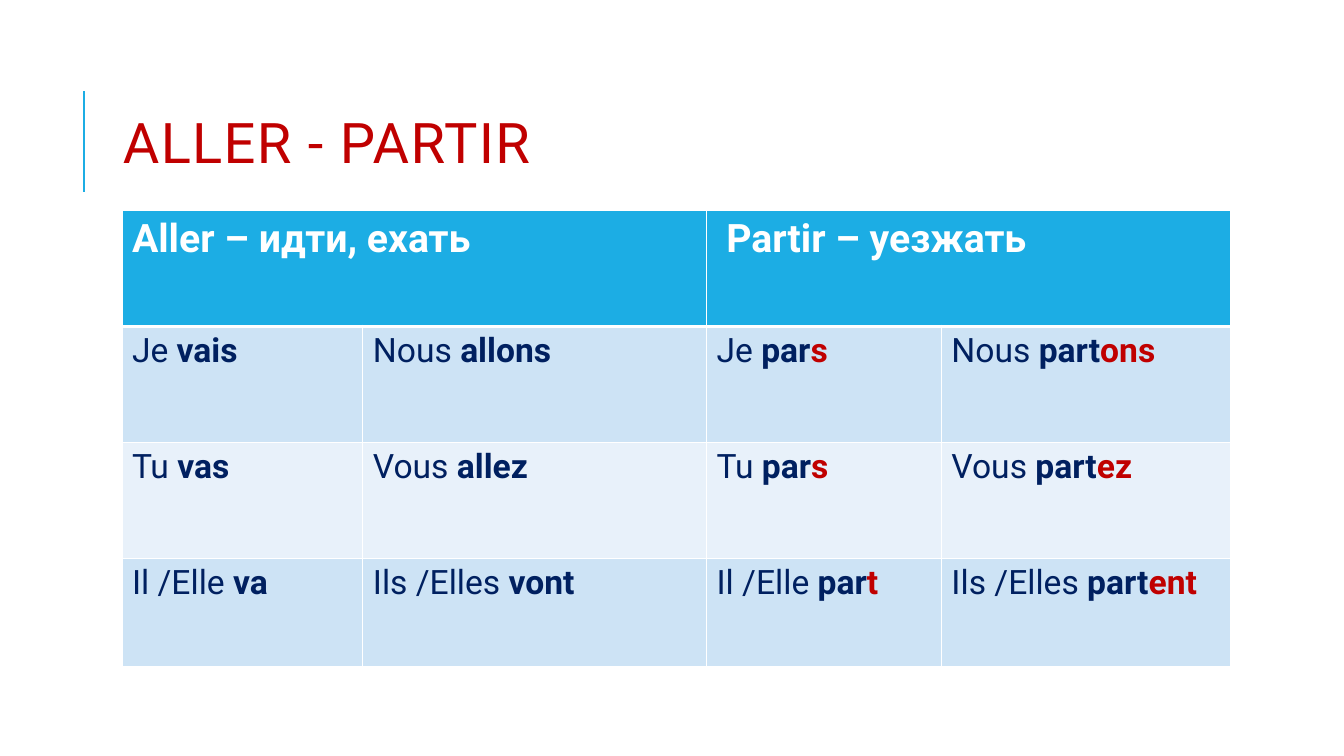
from lxml import etree
from pptx import Presentation
from pptx import util as u
from pptx.dml.color import RGBColor
from pptx.enum import shapes, text
from pptx.oxml import ns

BLUE, NAVY, RED, WHITE = "1CADE4", "002060", "C00000", "FFFFFF"
BANDS = ["CDE3F5", "E8F1FA"]
HEADINGS = ["Aller – идти, ехать", " Partir – уезжать"]
CONJUGATION = [
    [("Je ", "vais"), ("Nous ", "allons"), ("Je ", "par", "s"), ("Nous ", "part", "ons")],
    [("Tu ", "vas"), ("Vous ", "allez"), ("Tu ", "par", "s"), ("Vous ", "part", "ez")],
    [("Il /Elle ", "va"), ("Ils /Elles ", "vont"), ("Il /Elle ", "par", "t"), ("Ils /Elles ", "part", "ent")],
]


def color(value):
    return RGBColor.from_string(value)


def write(para, words, size=24, fill=NAVY, bold=False, spacing=None):
    span = para.add_run()
    span.text = words
    span.font.name = "Roboto"
    span.font.size = u.Pt(size)
    span.font.bold = bold
    span.font.color.rgb = color(fill)
    if spacing is not None:
        span.font._element.set("spc", str(spacing))


class VerbPage:
    def __init__(self, deck, columns=80, rows=45):
        self.page = deck.slides.add_slide(deck.slide_layouts[5])
        self.column = deck.slide_width / columns
        self.row = deck.slide_height / rows

    def across(self, count):
        return u.Emu(round(count * self.column))

    def down(self, count):
        return u.Emu(round(count * self.row))

    def title(self, words, left, top, width, height):
        box = self.page.shapes.title
        box.left, box.top = self.across(left), self.down(top)
        box.width, box.height = self.across(width), self.down(height)
        frame = box.text_frame
        frame.word_wrap = True
        frame.auto_size = text.MSO_AUTO_SIZE.NONE
        frame.vertical_anchor = text.MSO_ANCHOR.MIDDLE
        para = frame.paragraphs[0]
        para.alignment = text.PP_ALIGN.LEFT
        para.line_spacing = 0.8
        write(para, words, size=40, fill=RED, spacing=100)

    def rule(self, left, top, bottom):
        line = self.page.shapes.add_connector(
            shapes.MSO_CONNECTOR.STRAIGHT,
            self.across(left), self.down(bottom), self.across(left), self.down(top))
        line.line.color.rgb = color(BLUE)
        line.line.width = u.Pt(1.5)
        etree.SubElement(line._element.spPr, ns.qn("a:effectLst"))

    def table(self, left, top, widths, heights):
        frame = self.page.shapes.add_table(
            len(heights), len(widths), self.across(left), self.down(top),
            self.across(sum(widths)), self.down(sum(heights)))
        grid = frame.table
        for column, width in zip(grid.columns, widths):
            column.width = self.across(width)
        for row, height in zip(grid.rows, heights):
            row.height = self.down(height)
        return grid

    def cell(self, cell, fill, bottom=1, top=1):
        cell.fill.solid()
        cell.fill.fore_color.rgb = color(fill)
        properties = cell._tc.get_or_add_tcPr()
        edges = {"lnL": 1, "lnR": 1, "lnT": top, "lnB": bottom}
        for place, (edge, points) in enumerate(edges.items()):
            border = etree.Element(ns.qn(f"a:{edge}"), w=str(u.Pt(points)))
            paint = etree.SubElement(border, ns.qn("a:solidFill"))
            etree.SubElement(paint, ns.qn("a:srgbClr"), val=WHITE)
            properties.insert(place, border)
        return cell.text_frame.paragraphs[0]


def main():
    deck = Presentation()
    deck.slide_width, deck.slide_height = u.Inches(80 / 6), u.Inches(7.5)
    page = VerbPage(deck)
    page.rule(left=5, top=5.4, bottom=11.4)
    page.title("ALLER - PARTIR", left=6.72, top=3.84, width=63.78, height=9.84)
    grid = page.table(7.26, 12.54, [14.34, 20.46, 13.98, 17.22], [6.9, 6.9, 6.9, 6.42])

    header = [page.cell(grid.cell(0, column), BLUE, bottom=3) for column in range(4)]
    for column, heading in zip((0, 2), HEADINGS):
        grid.cell(0, column).merge(grid.cell(0, column + 1))
        write(header[column], heading, size=28, fill=WHITE, bold=True)

    for row, forms in enumerate(CONJUGATION, start=1):
        for column, (pronoun, stem, *ending) in enumerate(forms):
            para = page.cell(grid.cell(row, column), BANDS[(row - 1) % 2], top=3 if row == 1 else 1)
            write(para, pronoun)
            write(para, stem, bold=True)
            for letters in ending:
                write(para, letters, fill=RED, bold=True)
    deck.save("out.pptx")


if __name__ == "__main__":
    main()
